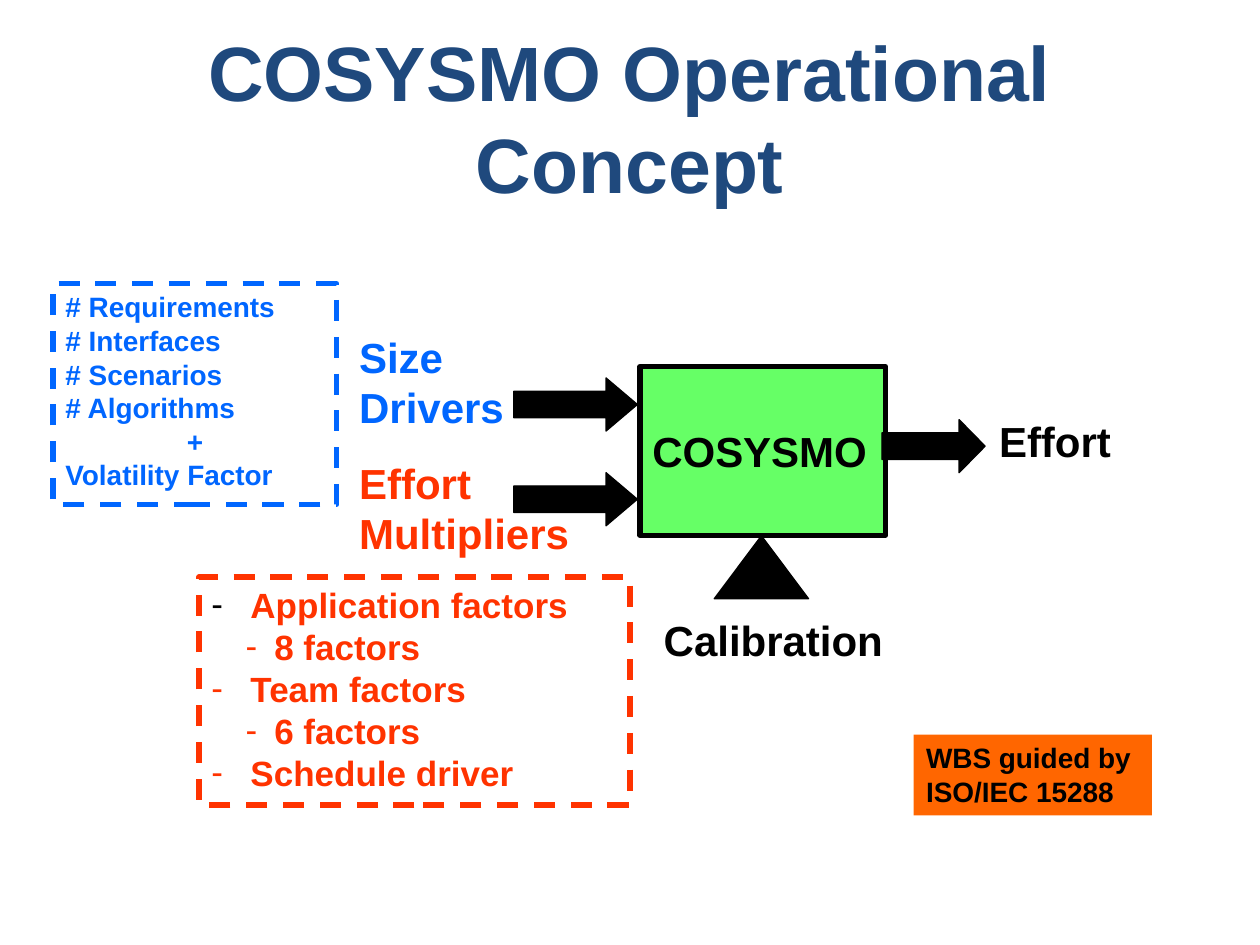
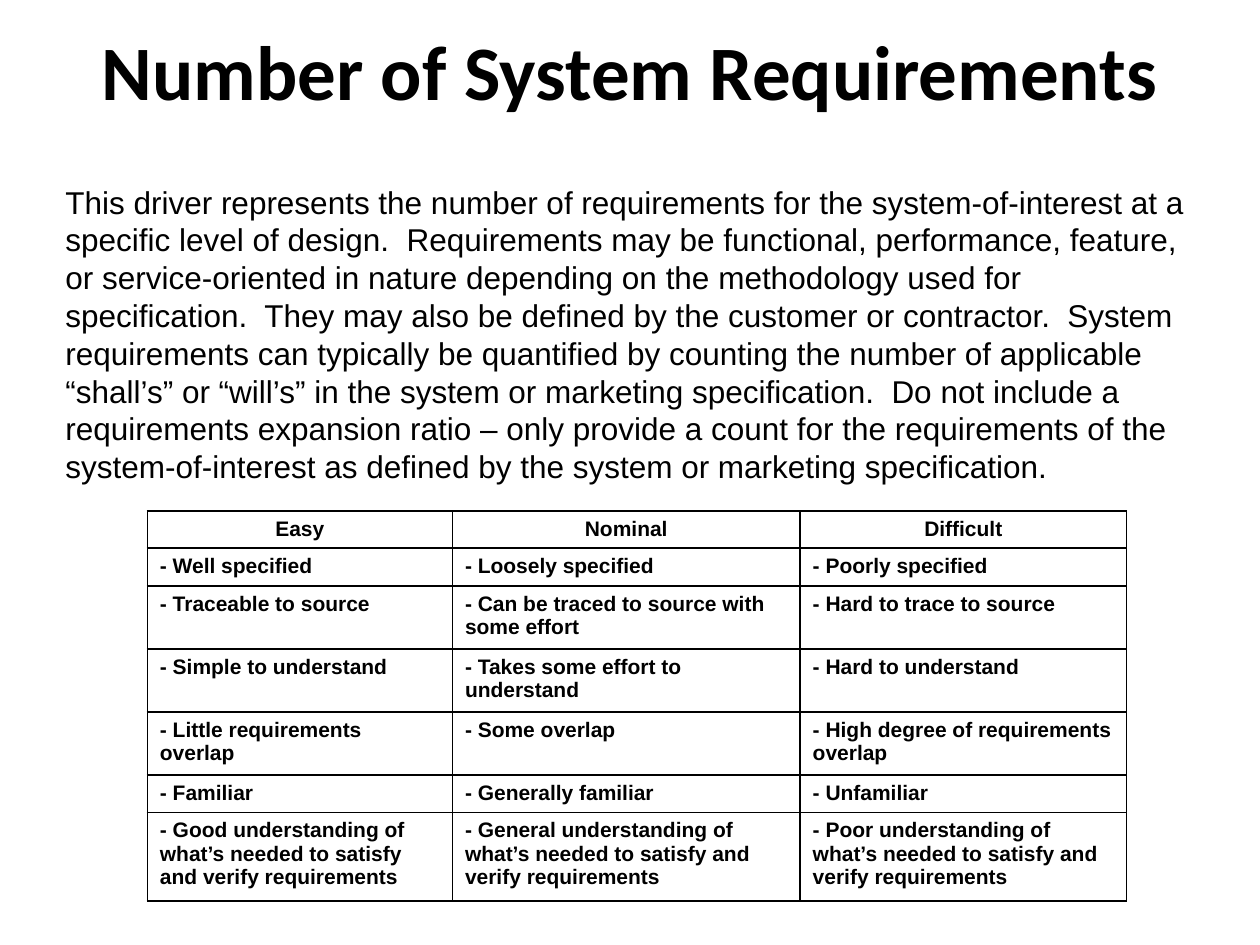
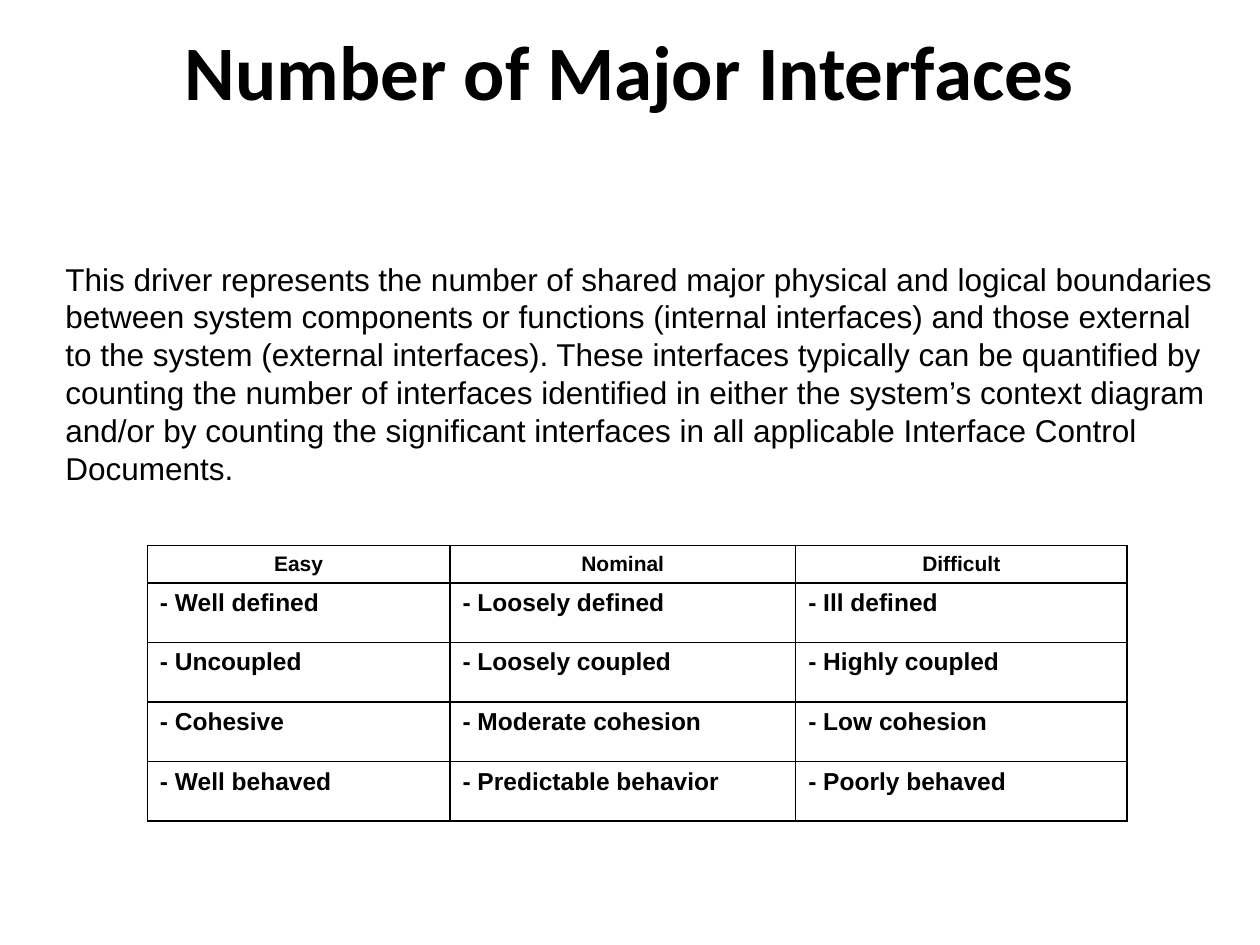
from pptx import Presentation
from pptx.dml.color import RGBColor
from pptx.enum.dml import MSO_LINE_DASH_STYLE as Dash
from pptx.enum.shapes import MSO_SHAPE as Preset
from pptx.enum.text import MSO_ANCHOR as Anchor, MSO_AUTO_SIZE as AutoSize, PP_ALIGN as Align
from pptx.oxml.xmlchemy import OxmlElement
from pptx.util import Cm, Pt

BLACK = RGBColor(0, 0, 0)
WHITE = RGBColor(0xFF, 0xFF, 0xFF)
NAVY = RGBColor(0x1F, 0x49, 0x7D)
BLUE = RGBColor(0x00, 0x66, 0xFF)
RED = RGBColor(0xFF, 0x33, 0x00)
GREEN = RGBColor(0x66, 0xFF, 0x66)
ORANGE = RGBColor(0xFF, 0x66, 0x00)

# Content: operational concept (positions in cm: left, top, width, height)
CONCEPT_TITLE = "COSYSMO Operational Concept"
MODEL = ("COSYSMO", (12.9, 7.39, 4.95, 3.4))
ARROWS = [  # position, head length as a share of the height
    ((10.36, 7.62, 2.49, 1.07), 0.59),
    ((10.36, 9.53, 2.49, 1.07), 0.59),
    ((17.78, 8.46, 2.08, 1.07), 0.49),
]
CALIBRATION_MARK = (14.4, 10.8, 1.9, 1.27)
LABELS = [
    (["Size", "Drivers"], BLUE, (6.99, 6.55, 3.43, 2.29)),
    (["Effort", "Multipliers"], RED, (6.99, 9.09, 4.75, 2.29)),
    (["Effort"], BLACK, (19.89, 8.26, 2.77, 1.27)),
    (["Calibration"], BLACK, (13.13, 12.27, 4.93, 1.27)),
]
SIZE_DRIVERS = ["# Requirements", "# Interfaces", "# Scenarios", "# Algorithms",
                "+", "Volatility Factor"]
SIZE_DRIVERS_AT = (1.07, 5.72, 5.72, 4.45)
FACTORS = [  # level, text, dash colour
    (0, "Application factors", BLACK),
    (1, "8 factors", RED),
    (0, "Team factors", RED),
    (1, "6 factors", RED),
    (0, "Schedule driver", RED),
]
FACTORS_AT = (4.01, 11.63, 8.69, 4.6)
DASH_INDENTS = [(0.79, -0.79), (1.27, -0.58)]  # left margin, first line, by level
STANDARD = (["WBS guided by", "ISO/IEC 15288"], (18.42, 14.81, 4.8, 1.63))

# Content: driver slides
LEVELS = ("Easy", "Nominal", "Difficult")
DRIVERS = [
    {
        "title": "Number of System Requirements",
        "definition": "This driver represents the number of requirements for the "
        "system-of-interest at a specific level of design.  Requirements may be functional, "
        "performance, feature, or service-oriented in nature depending on the methodology used "
        "for specification.  They may also be defined by the customer or contractor.  System "
        "requirements can typically be quantified by counting the number of applicable “shall’s” "
        "or “will’s” in the system or marketing specification.  Do not include a requirements "
        "expansion ratio – only provide a count for the requirements of the system-of-interest "
        "as defined by the system or marketing specification.",
        "definition_at": (1.07, 3.53, 23.5, 6.4),
        "ratings": [
            ("Well specified", "Loosely specified", "Poorly specified"),
            ("Traceable to source", "Can be traced to source with some effort",
             "Hard to trace to source"),
            ("Simple to understand", "Takes some effort to understand", "Hard to understand"),
            ("Little requirements overlap", "Some overlap",
             "High degree of requirements overlap"),
            ("Familiar", "Generally familiar", "Unfamiliar"),
            ("Good understanding of what’s needed to satisfy and verify requirements",
             "General understanding of what’s needed to satisfy and verify requirements",
             "Poor understanding of what’s needed to satisfy and verify requirements"),
        ],
        "rating_size": 12,
        "table_top": 10.3,
        "columns": (6.15, 7.01, 6.58),
        "rows": (0.75, 0.76, 1.27, 1.27, 1.27, 0.76, 1.78),
    },
    {
        "title": "Number of Major Interfaces",
        "definition": "This driver represents the number of shared major physical and logical "
        "boundaries between system components or functions (internal interfaces) and those "
        "external to the system (external interfaces). These interfaces typically can be "
        "quantified by counting the number of interfaces identified in either the system’s "
        "context diagram and/or by counting the significant interfaces in all applicable "
        "Interface Control Documents.",
        "definition_at": (1.07, 5.08, 23.7, 4.88),
        "ratings": [
            ("Well defined", "Loosely defined", "Ill defined"),
            ("Uncoupled", "Loosely coupled", "Highly coupled"),
            ("Cohesive", "Moderate cohesion", "Low cohesion"),
            ("Well behaved", "Predictable behavior", "Poorly behaved"),
        ],
        "rating_size": 14,
        "table_top": 11.0,
        "columns": (6.1, 6.97, 6.68),
        "rows": (0.75,) + (1.2,) * 4,
    },
]
TABLE_LEFT = 2.97


def cm(lengths):
    return [Cm(length) for length in lengths]


def write(frame, lines, size, color=BLACK, bold=True, font="Arial", align=Align.LEFT, **frame_format):
    """Fill a text frame with one paragraph per line, then format the frame."""
    for number, line in enumerate(lines):
        paragraph = frame.add_paragraph() if number else frame.paragraphs[0]
        paragraph.alignment = align
        run = paragraph.add_run()
        run.text = line
        run.font.color.rgb = color
        for name, value in {"size": Pt(size), "bold": bold, "name": font}.items():
            setattr(run.font, name, value)
    for name, value in {"auto_size": AutoSize.NONE, **frame_format}.items():
        setattr(frame, name, value)


def add_titled_slide(deck, title, **title_format):
    slide = deck.slides.add_slide(deck.slide_layouts[5])
    heading = slide.shapes.title
    heading.left, heading.top, heading.width, heading.height = cm((1.27, 0.76, 22.86, 3.18))
    write(heading.text_frame, [title], 44, align=Align.CENTER,
          vertical_anchor=Anchor.MIDDLE, **title_format)
    return slide


def add_preset(slide, preset, place, fill=None, line=None, width=0.75, dash=None):
    shape = slide.shapes.add_shape(preset, *cm(place))
    shape.shadow.inherit = False
    if fill is None:
        shape.fill.background()
    else:
        shape.fill.solid()
        shape.fill.fore_color.rgb = fill
    if line is None:
        shape.line.fill.background()
    else:
        shape.line.color.rgb = line
        shape.line.width = Pt(width)
        shape.line.dash_style = dash
    return shape


def add_text(slide, lines, place, size, **text_format):
    write(slide.shapes.add_textbox(*cm(place)).text_frame, lines, size, **text_format)


def add_child(parent, tag, **attributes):
    child = OxmlElement(tag)
    for name, value in attributes.items():
        child.set(name, str(value))
    parent.append(child)
    return child


def set_dash_bullet(paragraph, level, color):
    properties = paragraph._p.get_or_add_pPr()
    margin, first_line = cm(DASH_INDENTS[level])
    for name, value in {"marL": margin, "indent": first_line, "lvl": level}.items():
        properties.set(name, str(value))
    add_child(add_child(properties, "a:buClr"), "a:srgbClr", val=color)
    add_child(properties, "a:buFont", typeface="Arial")
    add_child(properties, "a:buChar", char="-")


def set_borders(cell):
    properties = cell._tc.get_or_add_tcPr()
    for position, side in enumerate(("a:lnL", "a:lnR", "a:lnT", "a:lnB")):
        border = OxmlElement(side)
        border.set("w", str(Pt(1)))
        add_child(add_child(border, "a:solidFill"), "a:srgbClr", val=BLACK)
        properties.insert(position, border)


def build_concept(deck):
    slide = add_titled_slide(deck, CONCEPT_TITLE, color=NAVY)

    # Model with its inputs, output and calibration
    name, place = MODEL
    model = add_preset(slide, Preset.RECTANGLE, place, GREEN, BLACK, 3)
    write(model.text_frame, [name], 24, word_wrap=False, vertical_anchor=Anchor.MIDDLE)
    for place, head in ARROWS:
        arrow = add_preset(slide, Preset.RIGHT_ARROW, place, BLACK, BLACK)
        arrow.adjustments[1] = head
    add_preset(slide, Preset.ISOSCELES_TRIANGLE, CALIBRATION_MARK, BLACK, BLACK)
    for lines, color, place in LABELS:
        add_text(slide, lines, place, 24, color=color, word_wrap=False)

    # Dashed driver boxes
    size_box = add_preset(slide, Preset.RECTANGLE, SIZE_DRIVERS_AT, None, BLUE, 3, Dash.DASH)
    write(size_box.text_frame, SIZE_DRIVERS, 16, BLUE, vertical_anchor=Anchor.TOP)
    size_box.text_frame.paragraphs[SIZE_DRIVERS.index("+")].alignment = Align.CENTER

    factor_box = add_preset(slide, Preset.RECTANGLE, FACTORS_AT, None, RED, 3, Dash.DASH)
    write(factor_box.text_frame, [text for _, text, _ in FACTORS], 20, RED,
          vertical_anchor=Anchor.TOP)
    for paragraph, (level, _, color) in zip(factor_box.text_frame.paragraphs, FACTORS):
        set_dash_bullet(paragraph, level, color)

    # Standard
    lines, place = STANDARD
    standard = add_preset(slide, Preset.RECTANGLE, place, ORANGE)
    write(standard.text_frame, lines, 16, word_wrap=False, vertical_anchor=Anchor.TOP)


def build_driver(deck, driver):
    slide = add_titled_slide(deck, driver["title"], font="Calibri", margin_bottom=Cm(2))
    add_text(slide, [driver["definition"]], driver["definition_at"], 18, bold=False,
             word_wrap=True, vertical_anchor=Anchor.MIDDLE)

    # Rating table
    columns, rows = driver["columns"], driver["rows"]
    place = (TABLE_LEFT, driver["table_top"], sum(columns), sum(rows))
    table = slide.shapes.add_table(len(rows), len(columns), *cm(place)).table
    for column, width in zip(table.columns, columns):
        column.width = Cm(width)
    for row, height in zip(table.rows, rows):
        row.height = Cm(height)
    for r, texts in enumerate([LEVELS] + driver["ratings"]):
        for c, text in enumerate(texts):
            cell = table.cell(r, c)
            cell.fill.solid()
            cell.fill.fore_color.rgb = WHITE
            set_borders(cell)
            if r == 0:
                write(cell.text_frame, [text], 12, align=Align.CENTER)
            else:
                write(cell.text_frame, [f"- {text}"], driver["rating_size"])


def main():
    deck = Presentation()
    deck.slide_width, deck.slide_height = cm((25.4, 19.05))
    build_concept(deck)
    for driver in DRIVERS:
        build_driver(deck, driver)
    deck.save("out.pptx")


if __name__ == "__main__":
    main()
